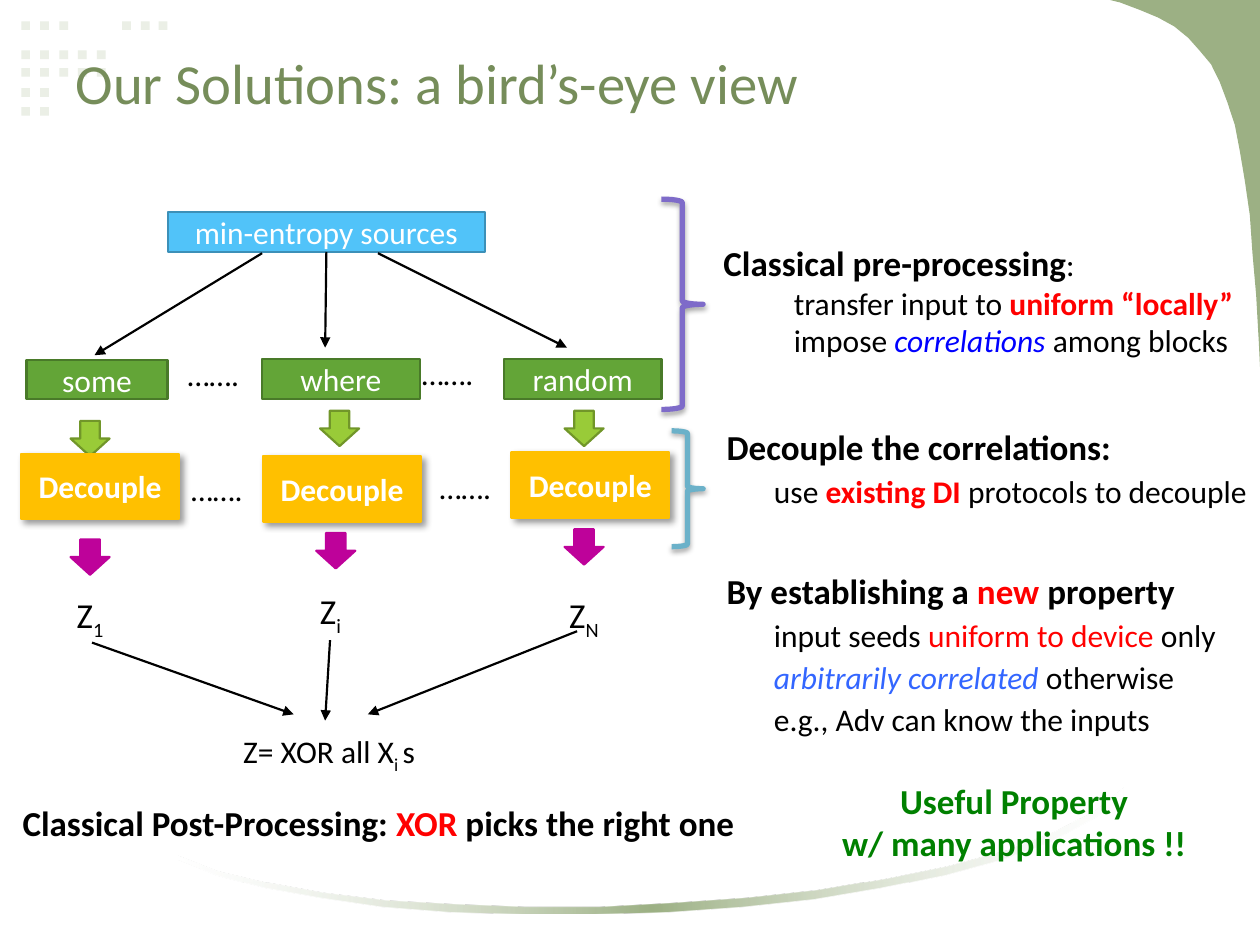
from pptx import Presentation
from pptx.dml.color import RGBColor
from pptx.enum.shapes import MSO_CONNECTOR, MSO_SHAPE
from pptx.enum.text import MSO_ANCHOR, PP_ALIGN
from pptx.oxml import parse_xml
from pptx.oxml.ns import nsdecls
from pptx.util import Pt

COLORS = {
    "dots": "EBEFE6", "sage": "9CB084", "title": "768D5A", "white": "FFFFFF",
    "black": "000000", "red": "FF0000", "blue": "0000FF", "sky": "3366FF",
    "forest": "008000", "source": "51C3F9", "source_edge": "3C90B8",
    "block": "63A537", "block_edge": "497A29", "decouple": "FFC000",
    "lime": "99CB38", "lime_edge": "719629", "magenta": "BE029A",
    "violet": "7E6BC9", "teal": "6BB1C9",
}
FONT = "Calibri"

# Content: left, top, width, height in points
TITLE = "Our Solutions: a bird’s-eye view"
BLOCKS = [("some", 15.1, 205.9, 80.6, 22.3), ("where", 149.8, 205.2, 90, 23),
          ("random", 288, 205.2, 90, 23)]
DECOUPLERS = [(150.5, 260.6), (292.3, 258.5), (12.2, 259.2)]
LIME_ARROWS = [(40.3, 240.5), (182.9, 234.7), (322.6, 234.7)]
MAGENTA_ARROWS = [(40.3, 308.2), (180.7, 304.6), (322.6, 302.4)]
ELLIPSES = [(100.1, 199.4), (234, 198.7), (102.2, 265), (244.1, 264.2)]
OUTPUTS = [("1", 36.7, 335.5, 31), ("i", 175.7, 333.4, 27.4), ("N", 318.2, 335.5, 32.4)]
LINKS = [(149.8, 144.7, 54, 203), (216, 144.7, 324, 198.7),
         (52.6, 367.2, 167.8, 408.2), (188.6, 365.8, 185.8, 411.8),
         (329.8, 360.7, 210.2, 408.2)]
BRACES = [(378, 113.8, 23.8, 120.2, "violet"), (383.8, 246.2, 18, 66.2, "teal")]

HEAD = {"size": 20, "bold": True}
RED = {"color": "red"}
NOTES = [  # place, indent of the detail lines, space before them, paragraphs
    ((401.8, 134.6, 315.4, 74.9), 44.7, 0, [
        [("Classical pre-processing", HEAD), (":", {})],
        [("transfer input to ", {}), ("uniform “locally”", {"color": "red", "bold": True})],
        [("impose ", {}), ("correlations", {"color": "blue", "italic": True}),
         (" among blocks", {})]]),
    ((408.2, 239.8, 313.9, 79.9), 27, 2.4, [
        [("Decouple the correlations:", HEAD)],
        [("use ", {}), ("existing DI", {"color": "red", "bold": True}),
         (" protocols to decouple", {})]]),
    ((408.2, 321.8, 297.4, 104.4), 27, 2.4, [
        [("By establishing a ", HEAD), ("new", HEAD | RED), (" property", HEAD)],
        [("input seeds ", {}), ("uniform to device ", RED), ("only", {})],
        [("arbitrarily correlated", {"color": "sky", "italic": True}), (" otherwise", {})],
        [("e.g., Adv can know the inputs", {})]]),
]
RESULT = [[("Z= XOR all X", {}), ("i ", {"base": -25}), ("s", {})]]
POST = [[("Classical Post-Processing: ", {}), ("XOR", RED), (" picks the right one", {})]]
USEFUL = [[("Useful Property", {})], [("w/ many applications !!", {})]]

# Decoration
DOT_COLUMNS = [12.2, 23, 34, 44.6, 55.4, 69.8, 80.6, 90.7]
DOT_ROWS = [(12.2, (0, 1, 2, 5, 6, 7)), (28.8, range(5)), (38.9, range(5)),
            (50.4, range(2)), (61.2, range(2))]
CORNER = [(634.3, 0), (720, 0), (720, 209.5), (719.3, 195), (717.8, 168.5),
          (715.7, 144.7), (714.2, 123), (711.4, 103.7), (708.5, 86.4), (705.6, 71.3),
          (701.3, 58.3), (697, 46.8), (692, 36.7), (685.4, 28.8), (679, 21.6),
          (671, 15.1), (661.7, 10), (651.6, 5.8), (640, 1.4)]
SWOOSH = [(642.2, 450), (642.2, 455), (624.2, 468), (601.2, 480.2), (572.4, 491),
          (540, 499.7), (504, 506.9), (465.1, 513.4), (424.1, 517.7), (382.3, 520.6),
          (339.8, 522), (298.1, 522), (257, 520.6), (218.9, 517.7), (183.6, 512.6),
          (151.2, 506.9), (123.8, 499.7), (102.2, 491), (102.2, 488.9), (124.6, 497.5),
          (152.6, 504), (185, 509.8), (221, 514.1), (259.9, 516.2), (300.2, 517.7),
          (342.7, 517.7), (384.5, 515.5), (427, 512.6), (467.3, 508.3), (506.2, 501.8),
          (542.2, 494.6), (574.6, 486), (602.6, 475.2), (625, 463.7)]

deck = Presentation()
deck.slide_width, deck.slide_height = Pt(720), Pt(540)
page = deck.slides.add_slide(deck.slide_layouts[5])


def rgb(name):
    return RGBColor.from_string(COLORS[name])


def write(frame, content, align=PP_ALIGN.LEFT, indent=0, before=0, **base):
    """Fill a frame from a string or from paragraphs of (text, format) spans."""
    paragraphs = [[(content, {})]] if isinstance(content, str) else content
    for number, spans in enumerate(paragraphs):
        para = frame.add_paragraph() if number else frame.paragraphs[0]
        para.alignment = align
        if number and indent:
            para._p.get_or_add_pPr().set("marL", str(Pt(indent)))
            para.space_before = Pt(before)
        for text, changes in spans:
            look = {"size": 18, "color": "black"} | base | changes
            span = para.add_run()
            span.text = text
            span.font.name = FONT
            span.font.size = Pt(look["size"])
            span.font.bold = look.get("bold", False)
            span.font.italic = look.get("italic", False)
            span.font.color.rgb = rgb(look["color"])
            if "base" in look:
                span.font._element.set("baseline", str(look["base"] * 1000))


def add_text(place, content, wrap=False, **look):
    box = page.shapes.add_textbox(*map(Pt, place))
    box.text_frame.word_wrap = wrap
    write(box.text_frame, content, **look)
    return box


def paint(shape, fill=None, edge=None, width=1.25):
    shape.shadow.inherit = False
    if fill:
        shape.fill.solid()
        shape.fill.fore_color.rgb = rgb(fill)
    else:
        shape.fill.background()
    if edge:
        shape.line.color.rgb = rgb(edge)
        shape.line.width = Pt(width)
    else:
        shape.line.fill.background()


def add_shape(kind, place, fill=None, edge=None, text=None, width=1.25, **look):
    shape = page.shapes.add_shape(kind, *map(Pt, place))
    paint(shape, fill, edge, width)
    if text:
        shape.text_frame.vertical_anchor = MSO_ANCHOR.MIDDLE
        write(shape.text_frame, text, align=PP_ALIGN.CENTER, color="white", **look)
    return shape


def add_outline(points, fill):
    corners = [(Pt(x), Pt(y)) for x, y in points]
    builder = page.shapes.build_freeform(*corners[0])
    builder.add_line_segments(corners[1:], close=True)
    shape = builder.convert_to_shape()
    paint(shape, fill)
    return shape


def cast_shadow(shape, alpha, blur, distance, angle):
    effects = shape._element.spPr.find("{*}effectLst")
    effects.append(parse_xml(
        f'<a:outerShdw {nsdecls("a")} blurRad="{Pt(blur)}" dist="{Pt(distance)}" '
        f'dir="{angle * 60000}" rotWithShape="0"><a:srgbClr val="{COLORS["black"]}">'
        f'<a:alpha val="{alpha * 1000}"/></a:srgbClr></a:outerShdw>'))


def add_arrow(*ends):
    arrow = page.shapes.add_connector(MSO_CONNECTOR.STRAIGHT, *map(Pt, ends))
    arrow.line.color.rgb = rgb("black")
    arrow.line.width = Pt(1.25)
    arrow.line._get_or_add_ln().append(
        parse_xml(f'<a:tailEnd {nsdecls("a")} type="triangle"/>'))
    arrow._element.spPr.append(parse_xml(f'<a:effectLst {nsdecls("a")}/>'))
    return arrow


# Background: dots, corner and fading swoosh
for top, columns in DOT_ROWS:
    for column in columns:
        add_shape(MSO_SHAPE.RECTANGLE, (DOT_COLUMNS[column], top, 5, 5), "dots")
add_outline(CORNER, "sage")
swoosh = add_outline(SWOOSH, "sage")
faded = f'<a:srgbClr val="{COLORS["white"]}"><a:alpha val="30000"/></a:srgbClr>'
solid = swoosh._element.spPr.find("{*}solidFill")
solid.getparent().replace(solid, parse_xml(
    f'<a:gradFill {nsdecls("a")}><a:gsLst><a:gs pos="0">{faded}</a:gs>'
    f'<a:gs pos="50000"><a:srgbClr val="{COLORS["sage"]}"/></a:gs>'
    f'<a:gs pos="100000">{faded}</a:gs></a:gsLst><a:lin ang="0"/></a:gradFill>'))

# Title, brought in front of the background
title = page.shapes.title
title._element.getparent().append(title._element)
title.left, title.top, title.width, title.height = map(Pt, (36, 21.6, 648, 50.4))
title.text_frame.vertical_anchor = MSO_ANCHOR.MIDDLE
write(title.text_frame, TITLE, size=32.4, color="title")

# Source and blocks
source = add_shape(MSO_SHAPE.RECTANGLE, (95.8, 121, 181.4, 23), "source", "source_edge",
                   "min-entropy sources")
for name, *place in BLOCKS:
    add_shape(MSO_SHAPE.RECTANGLE, place, "block", "block_edge", name)

# Arrows
for ends in LINKS:
    add_arrow(*ends)
add_arrow(186.5, 144, 185.8, 198.7).begin_connect(source, 2)
for spots, fill, edge in ((LIME_ARROWS, "lime", "lime_edge"),
                          (MAGENTA_ARROWS, "magenta", "magenta")):
    for spot in spots:
        add_shape(MSO_SHAPE.DOWN_ARROW, (*spot, 22.3, 20.2), fill, edge)

# Decoupling row, outputs and result
for spot in DECOUPLERS:
    box = add_shape(MSO_SHAPE.RECTANGLE, (*spot, 90, 37.4), "decouple", "decouple",
                    "Decouple", bold=True)
    cast_shadow(box, 40, 4, 3, 45)
for spot in ELLIPSES:
    add_text((*spot, 43.9, 28.8), "…….")
for index, left, top, width in OUTPUTS:
    add_text((left, top, width, 31.7), [[("Z", {}), (index, {"base": -25})]], size=20)
add_text((131.8, 414.7, 115.2, 28.8), RESULT)

# Braces and explanations
for *place, edge in BRACES:
    brace = add_shape(MSO_SHAPE.RIGHT_BRACE, place, edge=edge, width=3)
    cast_shadow(brace, 35, 3.1, 1.8, 90)
for place, indent, before, paragraphs in NOTES:
    note = add_text(place, paragraphs, wrap=True, indent=indent, before=before)
    if not before:
        note.text_frame.paragraphs[0]._p.get_or_add_pPr().set("marL", str(Pt(4.5)))
add_text((5.8, 454.3, 427, 31.7), POST, wrap=True, **HEAD)
add_text((473, 442.1, 213.1, 55.4), USEFUL, wrap=True, align=PP_ALIGN.CENTER,
         color="forest", **HEAD)

deck.save("out.pptx")
